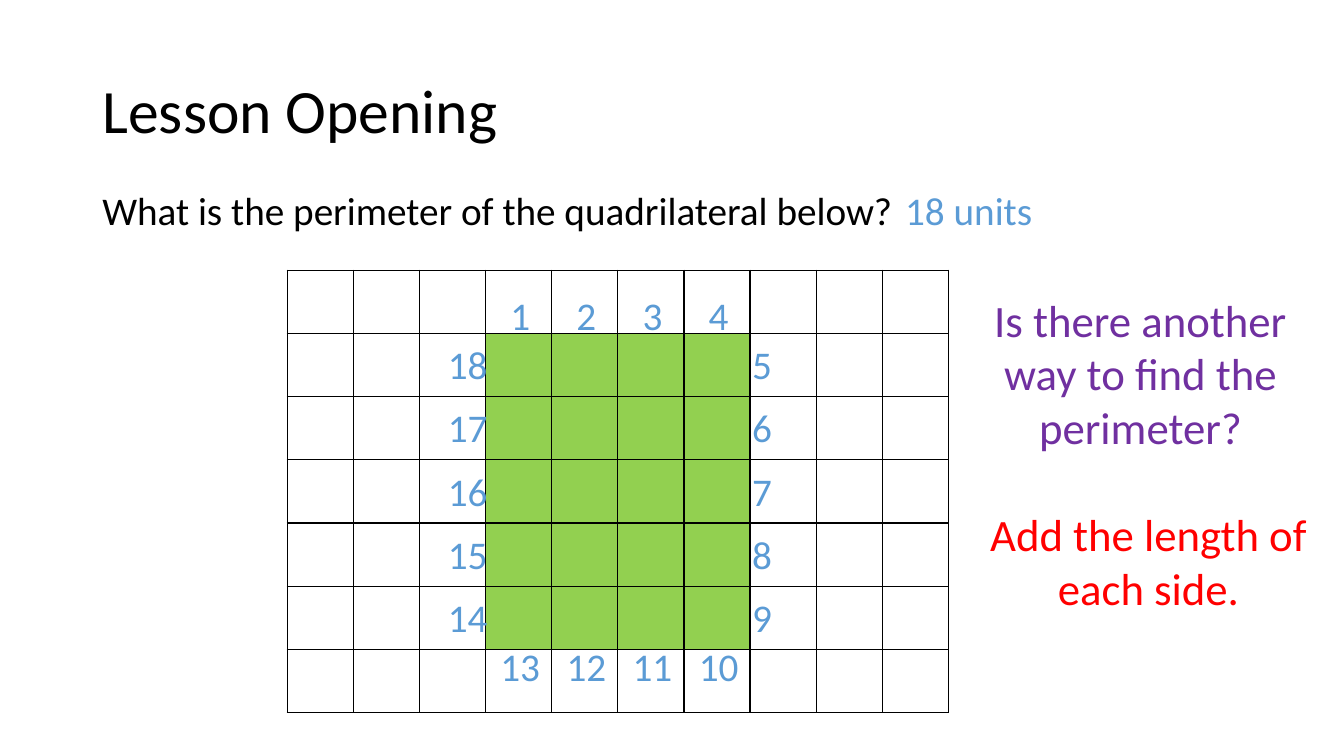
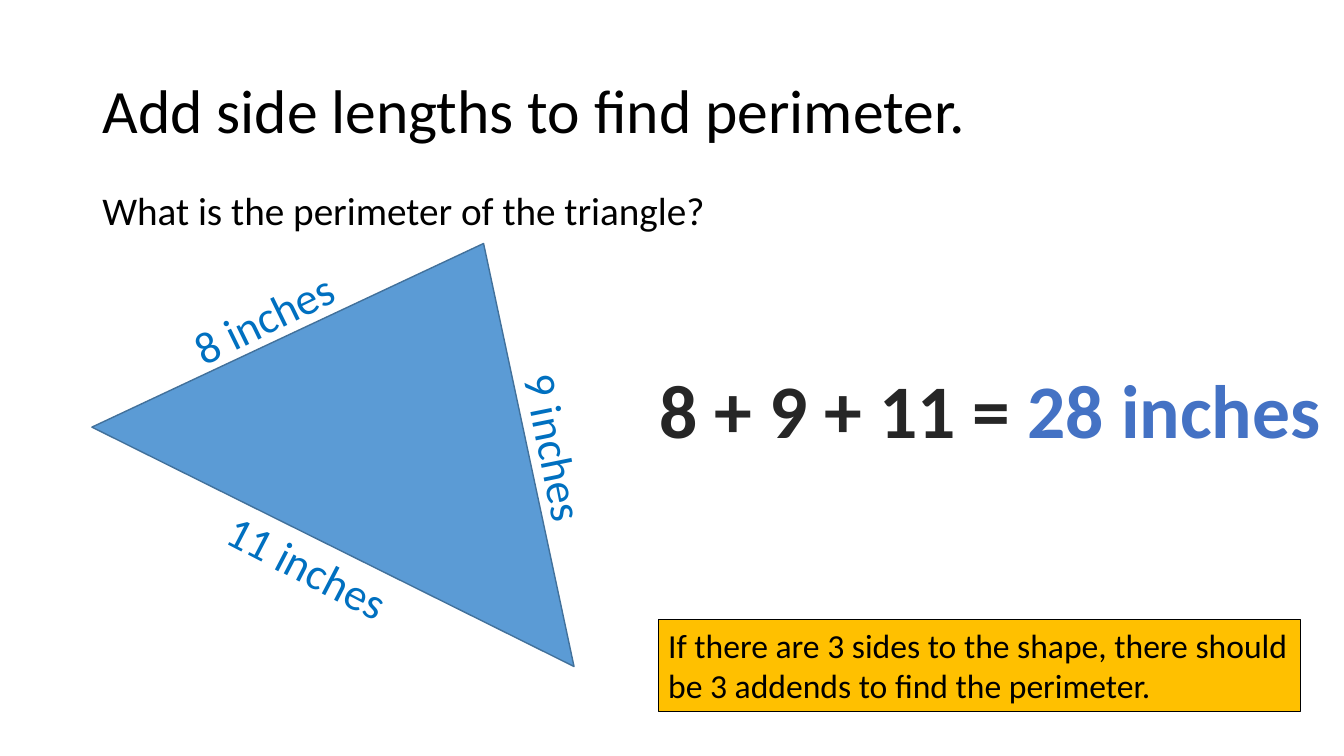
from lxml import etree
from pptx import Presentation
from pptx.dml.color import RGBColor
from pptx.enum.shapes import MSO_SHAPE
from pptx.enum.text import MSO_ANCHOR, MSO_AUTO_SIZE, PP_ALIGN
from pptx.oxml.ns import qn
from pptx.util import Pt

RECTANGLE = MSO_SHAPE.RECTANGLE
TRIANGLE = MSO_SHAPE.ISOSCELES_TRIANGLE
LEFT, CENTER = PP_ALIGN.LEFT, PP_ALIGN.CENTER
TOP, MIDDLE = MSO_ANCHOR.TOP, MSO_ANCHOR.MIDDLE
NO_AUTOFIT = MSO_AUTO_SIZE.NONE

FONT = "Calibri"
TITLE_LAYOUT = 5
BLACK, BLUE, GREEN = "000000", "5B9BD5", "92D050"
DARK_BLUE, LABEL_BLUE, ANSWER_BLUE = "42719B", "0070C0", "4472C4"
PURPLE, RED, AMBER, CHARCOAL = "7030A0", "FF0000", "FFC000", "262626"

# Boxes are left, top, width, height in points.
SLIDE_SIZE = (960, 540)
TITLE_BOX = (66, 28.8, 828, 104.4)
QUESTION_BOX = (66, 133.2, 828, 42)

OPENING = {
    "title": "Lesson Opening",
    "question": "What is the perimeter of the quadrilateral below?",
    "texts": [
        ("18 units", (638.6, 129.6, 106.6, 41), 28, BLUE),
        ("Is there another way to find the perimeter?", (688.3, 205.2, 252.7, 123.8), 32, PURPLE),
        ("Add the length of each side.", (694.1, 358.6, 252.7, 85), 32, RED),
    ],
}
TRIANGLE_SIDES = {
    "title": "Add side lengths to find perimeter.",
    "question": "What is the perimeter of the triangle?",
    "sides": [
        ("11 inches", (150.5, 381.6, 138.2, 46), 27.4),
        ("9 inches", (335.5, 296.6, 122.4, 46), 78.6),
        ("8 inches", (127.4, 203.8, 122.4, 46), 334),
    ],
    "sum": [
        ("8 + 9 + 11 =", (462.2, 255.6, 268.6, 72.7), CHARCOAL),
        ("28 inches", (725.8, 255.6, 226.1, 72.7), ANSWER_BLUE),
    ],
    "rule": "If there are 3 sides to the shape, there should be 3 addends to find the perimeter.",
}

GRID_LEFT, GRID_TOP = 205.2, 193
GRID_COLUMNS, GRID_ROWS = 10, 7
CELL_WIDTH, CELL_HEIGHT = 47.25, 45.15
GREEN_COLUMNS, GREEN_ROWS = range(3, 7), range(1, 6)
COUNT_WIDTH, COUNT_HEIGHT = 43, 41


def color(value):
    return RGBColor.from_string(value)


def points(values):
    return [Pt(value) for value in values]


def write(shape, text, size=28, fill=BLACK, bold=False, align=CENTER,
          anchor=TOP, wrap=True, spacing=1.0):
    frame = shape.text_frame
    frame.auto_size = NO_AUTOFIT
    frame.word_wrap = wrap
    frame.vertical_anchor = anchor
    para = frame.paragraphs[0]
    para.alignment = align
    para.line_spacing = spacing
    span = para.add_run()
    span.text = text
    span.font.name = FONT
    span.font.size = Pt(size)
    span.font.bold = bold
    span.font.color.rgb = color(fill)


def add_text(page, text, box, rotation=0, **style):
    shape = page.shapes.add_textbox(*points(box))
    shape.rotation = rotation
    write(shape, text, **style)


def add_figure(page, kind, box, fill, line, line_width):
    shape = page.shapes.add_shape(kind, *points(box))
    shape.shadow.inherit = False
    shape.fill.solid()
    shape.fill.fore_color.rgb = color(fill)
    shape.line.color.rgb = color(line)
    shape.line.width = Pt(line_width)
    return shape


def add_page(deck, content):
    page = deck.slides.add_slide(deck.slide_layouts[TITLE_LAYOUT])
    title = page.shapes.title
    title.left, title.top, title.width, title.height = points(TITLE_BOX)
    write(title, content["title"], size=44, align=LEFT, anchor=MIDDLE, spacing=0.9)
    add_text(page, content["question"], QUESTION_BOX, align=LEFT, spacing=0.9)
    return page


def add_borders(cell):
    properties = cell._tc.get_or_add_tcPr()
    for side in ("a:lnL", "a:lnR", "a:lnT", "a:lnB"):
        line = etree.SubElement(properties, qn(side), w=str(Pt(1)))
        solid = etree.SubElement(line, qn("a:solidFill"))
        etree.SubElement(solid, qn("a:srgbClr"), val=BLACK)


def add_grid(page):
    box = (GRID_LEFT, GRID_TOP, GRID_COLUMNS * CELL_WIDTH, GRID_ROWS * CELL_HEIGHT)
    table = page.shapes.add_table(GRID_ROWS, GRID_COLUMNS, *points(box)).table
    table.first_row = table.horz_banding = False
    for column in table.columns:
        column.width = Pt(CELL_WIDTH)
    for row_number, row in enumerate(table.rows):
        row.height = Pt(CELL_HEIGHT)
        for column_number, cell in enumerate(row.cells):
            add_borders(cell)
            if row_number in GREEN_ROWS and column_number in GREEN_COLUMNS:
                cell.fill.solid()
                cell.fill.fore_color.rgb = color(GREEN)
            else:
                cell.fill.background()


def count_positions():
    """Return the centre and top of each unit count, clockwise from the top left."""
    centers = [GRID_LEFT + (column + 0.5) * CELL_WIDTH + 1 for column in GREEN_COLUMNS]
    tops = [GRID_TOP + row * CELL_HEIGHT + 1.5 for row in GREEN_ROWS]
    above, below = 204.5, 455
    left_side, right_side = 334, 544.3
    return ([(center, above) for center in centers]
            + [(right_side, top) for top in tops]
            + [(center, below) for center in reversed(centers)]
            + [(left_side, top) for top in reversed(tops)])


def build_opening(deck):
    page = add_page(deck, OPENING)
    add_grid(page)
    for number, (center, top) in enumerate(count_positions(), start=1):
        box = (center - COUNT_WIDTH / 2, top, COUNT_WIDTH, COUNT_HEIGHT)
        add_text(page, str(number), box, fill=BLUE, wrap=False)
    for text, box, size, fill in OPENING["texts"]:
        add_text(page, text, box, size=size, fill=fill)


def build_triangle(deck):
    page = add_page(deck, TRIANGLE_SIDES)
    triangle = add_figure(page, TRIANGLE, (99.4, 161.3, 384.5, 241.9), BLUE, DARK_BLUE, 1)
    triangle.rotation = 26.4
    for text, box, rotation in TRIANGLE_SIDES["sides"]:
        add_text(page, text, box, rotation, size=32, fill=LABEL_BLUE, wrap=False)
    for text, box, fill in TRIANGLE_SIDES["sum"]:
        add_text(page, text, box, size=54, fill=fill, bold=True, wrap=False)
    rule = add_figure(page, RECTANGLE, (470.2, 442.8, 458.6, 65.5), AMBER, BLACK, 0.75)
    write(rule, TRIANGLE_SIDES["rule"], size=24, align=LEFT)


def main():
    deck = Presentation()
    deck.slide_width, deck.slide_height = points(SLIDE_SIZE)
    build_opening(deck)
    build_triangle(deck)
    deck.save("out.pptx")


if __name__ == "__main__":
    main()
